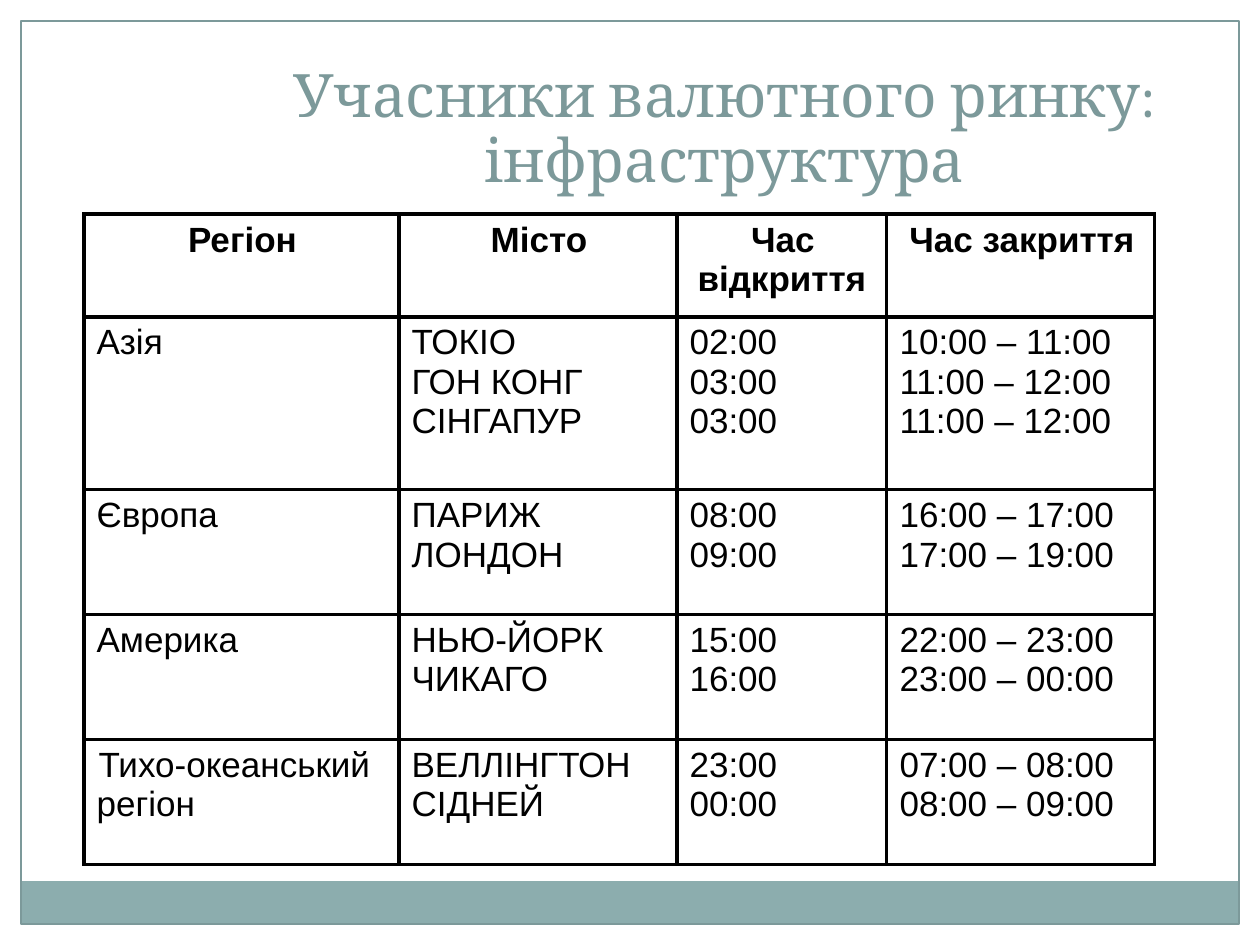
from lxml import etree
from pptx import Presentation
from pptx import util as u
from pptx.dml.color import RGBColor
from pptx.enum import shapes, text
from pptx.oxml import ns

# Content
TITLE = "Учасники валютного ринку: інфраструктура"
HEADERS = ["Регіон", "Місто", "Час відкриття", "Час закриття"]
REGIONS = [
    ("Азія", [("ТОКІО", "02:00", "10:00 – 11:00"),
              ("ГОН КОНГ", "03:00", "11:00 – 12:00"),
              ("СІНГАПУР", "03:00", "11:00 – 12:00")]),
    ("Європа", [("ПАРИЖ", "08:00", "16:00 – 17:00"),
                ("ЛОНДОН", "09:00", "17:00 – 19:00")]),
    ("Америка", [("НЬЮ-ЙОРК", "15:00", "22:00 – 23:00"),
                 ("ЧИКАГО", "16:00", "23:00 – 00:00")]),
    ("Тихо-океанський регіон", [("ВЕЛЛІНГТОН", "23:00", "07:00 – 08:00"),
                                ("СІДНЕЙ", "00:00", "08:00 – 09:00")]),
]

THEME = {
    "white": "FFFFFF", "band": "8CADAE", "accent": "7C999A", "ink": "000000",
    "title": {"name": "Cambria", "size": u.Pt(34.2), "bold": False},
    "header": {"name": "Arial", "size": u.Pt(20), "bold": True},
    "body": {"name": "Arial", "size": u.Pt(20), "bold": False},
}

# Geometry in px
PX_PER_INCH = 126
WIDTH, HEIGHT, MARGIN = 1260, 945, 21
INNER = WIDTH - 2 * MARGIN
BANDS = [
    ((0, 0, WIDTH, MARGIN), "white"),
    ((WIDTH - MARGIN, 0, MARGIN, HEIGHT), "white"),
    ((0, 0, MARGIN, HEIGHT), "white"),
    ((MARGIN, 881, INNER, 43), "band"),
]
FRAME = (MARGIN, MARGIN, INNER, HEIGHT - 2 * MARGIN)
TITLE_BOX = (189, 38, 1071, 157)
TABLE_AT = (84, 214)
COLUMNS = [315, 278, 210, 268]
ROWS = [103, 173, 125, 125, 125]
HANGING, FIRST_LINE = (48, -48), (0, 2)


def px(value):
    return u.Emu(round(value * 914400 / PX_PER_INCH))


def apply(target, values):
    for name, value in values.items():
        setattr(target, name, value)


def style(span, kind, color):
    apply(span.font, THEME[kind])
    span.font.color.rgb = RGBColor.from_string(THEME[color])


def add_rect(page, box, fill=None, line=None):
    rect = page.shapes.add_shape(shapes.MSO_SHAPE.RECTANGLE, *map(px, box))
    rect.shadow.inherit = False
    if fill:
        rect.fill.solid()
        rect.fill.fore_color.rgb = RGBColor.from_string(THEME[fill])
    else:
        rect.fill.background()
    if line:
        rect.line.color.rgb = RGBColor.from_string(THEME[line])
        rect.line.width = u.Pt(0.75)
    else:
        rect.line.fill.background()


def add_borders(cell):
    props = cell._tc.get_or_add_tcPr()
    for index, side in enumerate(("lnL", "lnR", "lnT", "lnB")):
        line = etree.Element(ns.qn(f"a:{side}"), w=str(u.Pt(2)))
        fill = etree.SubElement(line, ns.qn("a:solidFill"))
        etree.SubElement(fill, ns.qn("a:srgbClr"), val=THEME["ink"])
        props.insert(index, line)


def fill_cell(cell, lines, kind, indent, align):
    cell.fill.background()
    add_borders(cell)
    frame = cell.text_frame
    for index, line in enumerate(lines):
        para = frame.add_paragraph() if index else frame.paragraphs[0]
        para.alignment = align
        props = para._p.get_or_add_pPr()
        for name, value in zip(("marL", "indent"), indent):
            props.set(name, str(px(value)))
        span = para.add_run()
        span.text = line
        style(span, kind, "ink")


deck = Presentation()
apply(deck, {"slide_width": px(WIDTH), "slide_height": px(HEIGHT)})
page = deck.slides.add_slide(deck.slide_layouts[5])

# Page frame and bands
for box, fill in BANDS:
    add_rect(page, box, fill=fill)
add_rect(page, FRAME, line="accent")

# Title, in front of the frame
title = page.shapes.title
title.element.getparent().append(title.element)
apply(title, dict(zip(("left", "top", "width", "height"), map(px, TITLE_BOX))))
apply(title.text_frame, {
    "text": TITLE, "word_wrap": True, "margin_bottom": 0,
    "auto_size": text.MSO_AUTO_SIZE.NONE,
    "vertical_anchor": text.MSO_ANCHOR.BOTTOM,
})
para = title.text_frame.paragraphs[0]
apply(para, {"alignment": text.PP_ALIGN.CENTER, "line_spacing": 0.9})
style(para.runs[0], "title", "accent")

# Trading hours table
table = page.shapes.add_table(
    len(ROWS), len(COLUMNS), *map(px, (*TABLE_AT, sum(COLUMNS), sum(ROWS)))).table
apply(table, {"first_row": False, "horz_banding": False})
for column, width in zip(table.columns, COLUMNS):
    column.width = px(width)
for row, height in zip(table.rows, ROWS):
    row.height = px(height)
for col, header in enumerate(HEADERS):
    fill_cell(table.cell(0, col), [header], "header", FIRST_LINE,
              text.PP_ALIGN.CENTER)
for row, (region, cities) in enumerate(REGIONS, 1):
    for col, lines in enumerate([[region], *zip(*cities)]):
        wraps = col == 0 and " " in region
        fill_cell(table.cell(row, col), lines, "body",
                  FIRST_LINE if wraps else HANGING, text.PP_ALIGN.LEFT)

deck.save("out.pptx")
